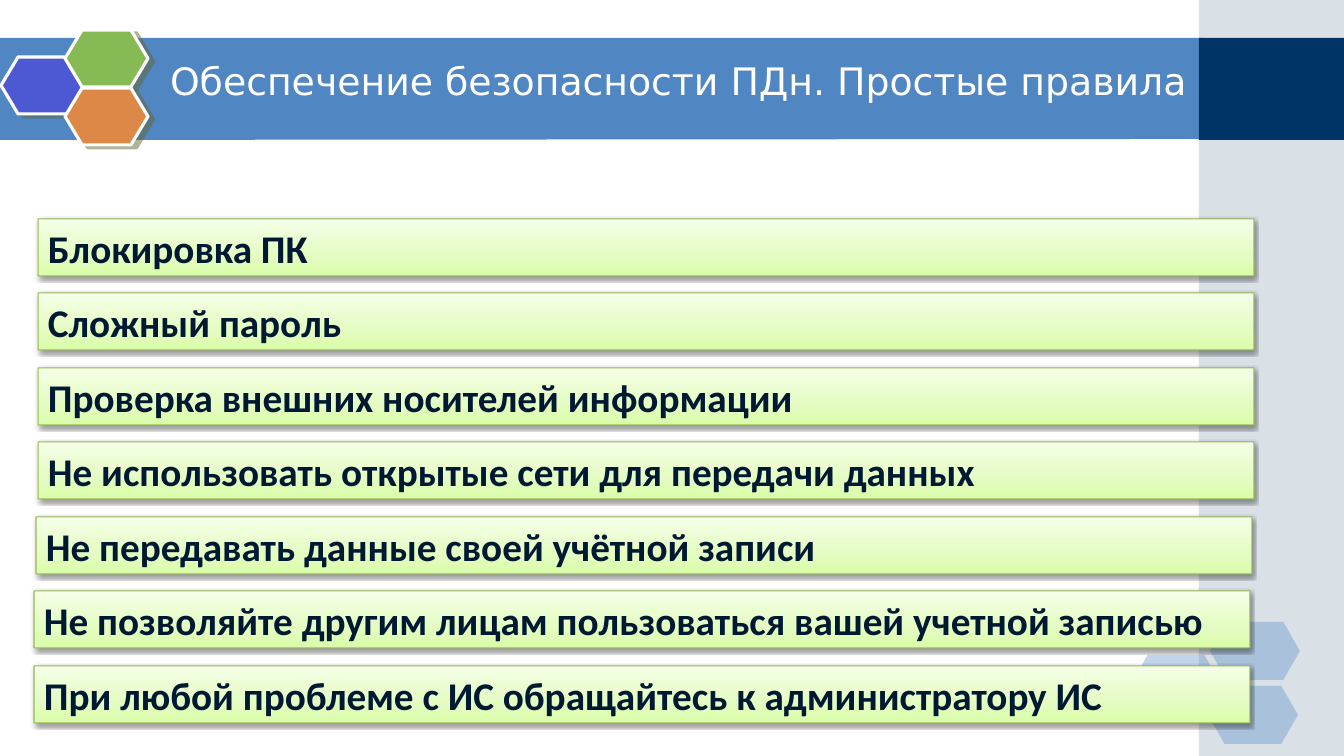
from dataclasses import dataclass

from lxml.etree import SubElement
from pptx import Presentation
from pptx.dml.color import RGBColor
from pptx.enum.shapes import MSO_SHAPE
from pptx.enum.text import MSO_ANCHOR, MSO_AUTO_SIZE, PP_ALIGN
from pptx.oxml.ns import qn
from pptx.shapes.autoshape import Shape
from pptx.slide import Slide
from pptx.text.text import TextFrame
from pptx.util import Emu, Pt

SLIDE_WIDTH, SLIDE_HEIGHT = 1344, 756
EMU_PER_PX = 12192000 / SLIDE_WIDTH

BAND_BLUE = "5086C2"
RULE_TOP, RULE_WIDTH, RULE_HEIGHT = 219, 1216, 57
TWO_RULE_STEPS = 149
RULE_GRADIENT = [(0, "DAFDA7"), (35, "E4FCC2"), (100, "F5FFE7")]


@dataclass(frozen=True)
class Box:
    left: int
    top: int
    width: int
    height: int


@dataclass(frozen=True)
class Shadow:
    color: str
    opacity: int
    blur_pt: float
    distance_pt: float
    angle: int


@dataclass(frozen=True)
class Panel:
    """A flat filled part of the background."""
    box: Box
    color: str
    opacity: int = 100
    kind: MSO_SHAPE = MSO_SHAPE.RECTANGLE
    corner: float | None = None
    outlined: bool = False


@dataclass(frozen=True)
class Rule:
    left: int
    wording: str


HEXAGON_SHADOW = Shadow("666633", 50, 0, 4.5, 27)
RULE_SHADOW = Shadow("000000", 38, 3.1, 1.6, 90)


def pale_hexagon(left: int, top: int) -> Panel:
    return Panel(Box(left, top, 90, 58), BAND_BLUE, 35, MSO_SHAPE.HEXAGON, 0.286)


def bright_hexagon(left: int, top: int, color: str) -> Panel:
    return Panel(Box(left, top, 83, 57), color, 100, MSO_SHAPE.HEXAGON, 0.3, True)


PANELS = [
    Panel(Box(1199, 0, 145, SLIDE_HEIGHT), "A0B5C4", 40),
    Panel(Box(1199, 38, 145, 102), "003366"),
    pale_hexagon(1131, 655),
    pale_hexagon(1210, 622),
    pale_hexagon(1208, 686),
    bright_hexagon(1, 57, "4C59D2"),
    bright_hexagon(65, 30, "85BA54"),
    bright_hexagon(65, 88, "DE8848"),
]

RULES = [
    Rule(38, "Блокировка ПК"),
    Rule(38, "Сложный пароль"),
    Rule(38, "Проверка внешних носителей информации"),
    Rule(38, "Не использовать открытые сети для передачи данных"),
    Rule(36, "Не передавать данные своей учётной записи"),
    Rule(34, "Не позволяйте другим лицам пользоваться вашей учетной записью"),
    Rule(34, "При любой проблеме с ИС обращайтесь к администратору ИС"),
]


def px(length: int) -> Emu:
    return Emu(round(length * EMU_PER_PX))


def rgb(color: str) -> RGBColor:
    return RGBColor.from_string(color)


def add_preset(slide: Slide, kind: MSO_SHAPE, box: Box, corner: float | None) -> Shape:
    shape = slide.shapes.add_shape(
        kind, px(box.left), px(box.top), px(box.width), px(box.height))
    shape.shadow.inherit = False
    if corner is not None:
        shape.adjustments[0] = corner
    return shape


def outline(shape: Shape, color: str, width_pt: float) -> None:
    shape.line.color.rgb = rgb(color)
    shape.line.width = Pt(width_pt)


def cast_shadow(shape: Shape, shadow: Shadow) -> None:
    effects = shape.element.spPr.find(qn("a:effectLst"))
    outer = SubElement(
        effects, qn("a:outerShdw"), blurRad=str(Pt(shadow.blur_pt)),
        dist=str(Pt(shadow.distance_pt)), dir=str(shadow.angle * 60000),
        algn="ctr", rotWithShape="0")
    tint = SubElement(outer, qn("a:srgbClr"), val=shadow.color)
    SubElement(tint, qn("a:alpha"), val=str(shadow.opacity * 1000))


def fill_gradient(shape: Shape, stops: list[tuple[int, str]]) -> None:
    """Run the stops from the bottom edge up to the top edge."""
    shape.fill.gradient()
    shape.fill.gradient_angle = 90
    stop_list = shape.element.spPr.find(".//" + qn("a:gsLst"))
    stop_list.clear()
    for percent, color in stops:
        stop = SubElement(stop_list, qn("a:gs"), pos=str(percent * 1000))
        SubElement(stop, qn("a:srgbClr"), val=color)


def write(frame: TextFrame, wording: str, font_name: str, size_pt: int,
          color: str, bold: bool) -> None:
    frame.text = wording
    frame.word_wrap = True
    frame.vertical_anchor = MSO_ANCHOR.MIDDLE
    paragraph = frame.paragraphs[0]
    paragraph.alignment = PP_ALIGN.LEFT
    font = paragraph.runs[0].font
    font.name, font.size, font.bold = font_name, Pt(size_pt), bold
    font.color.rgb = rgb(color)


def add_band(slide: Slide) -> None:
    builder = slide.shapes.build_freeform(-1, 38, scale=EMU_PER_PX)
    builder.add_line_segments([(1203, 38), (1203, 139), (-1, 140)], close=True)
    band = builder.convert_to_shape()
    band.shadow.inherit = False
    band.fill.solid()
    band.fill.fore_color.rgb = rgb(BAND_BLUE)
    band.line.fill.background()


def add_panel(slide: Slide, panel: Panel) -> None:
    shape = add_preset(slide, panel.kind, panel.box, panel.corner)
    shape.fill.solid()
    shape.fill.fore_color.rgb = rgb(panel.color)
    if panel.opacity < 100:
        tint = shape.element.spPr.find(qn("a:solidFill")).find(qn("a:srgbClr"))
        SubElement(tint, qn("a:alpha"), val=str(panel.opacity * 1000))
    if panel.outlined:
        outline(shape, "FFFFFF", 2.25)
        cast_shadow(shape, HEXAGON_SHADOW)
    else:
        shape.line.fill.background()


def place_title(slide: Slide) -> None:
    """Fill the title placeholder and bring it in front of the band."""
    title = slide.shapes.title
    title.left, title.top = px(156), px(40)
    title.width, title.height = px(1063), px(80)
    frame = title.text_frame
    frame.margin_left = frame.margin_right = px(14)
    frame.margin_top = frame.margin_bottom = px(7)
    write(frame, "Обеспечение безопасности ПДн. Простые правила",
          "DejaVu Sans", 27, "FFFFFF", False)
    frame.auto_size = MSO_AUTO_SIZE.NONE
    slide.shapes.element.append(title.element)


def add_rule(slide: Slide, index: int, rule: Rule) -> None:
    top = RULE_TOP + index * TWO_RULE_STEPS // 2
    box = Box(rule.left, top, RULE_WIDTH, RULE_HEIGHT)
    bar = add_preset(slide, MSO_SHAPE.ROUNDED_RECTANGLE, box, 0.003)
    fill_gradient(bar, RULE_GRADIENT)
    outline(bar, "98B955", 0.75)
    cast_shadow(bar, RULE_SHADOW)
    write(bar.text_frame, rule.wording, "Calibri", 28, "001933", True)
    bar.text_frame.auto_size = MSO_AUTO_SIZE.SHAPE_TO_FIT_TEXT


def main() -> None:
    deck = Presentation()
    deck.slide_width, deck.slide_height = px(SLIDE_WIDTH), px(SLIDE_HEIGHT)
    slide = deck.slides.add_slide(deck.slide_layouts.get_by_name("Title Only"))
    add_band(slide)
    for panel in PANELS:
        add_panel(slide, panel)
    place_title(slide)
    for index, rule in enumerate(RULES):
        add_rule(slide, index, rule)
    deck.save("out.pptx")


if __name__ == "__main__":
    main()
